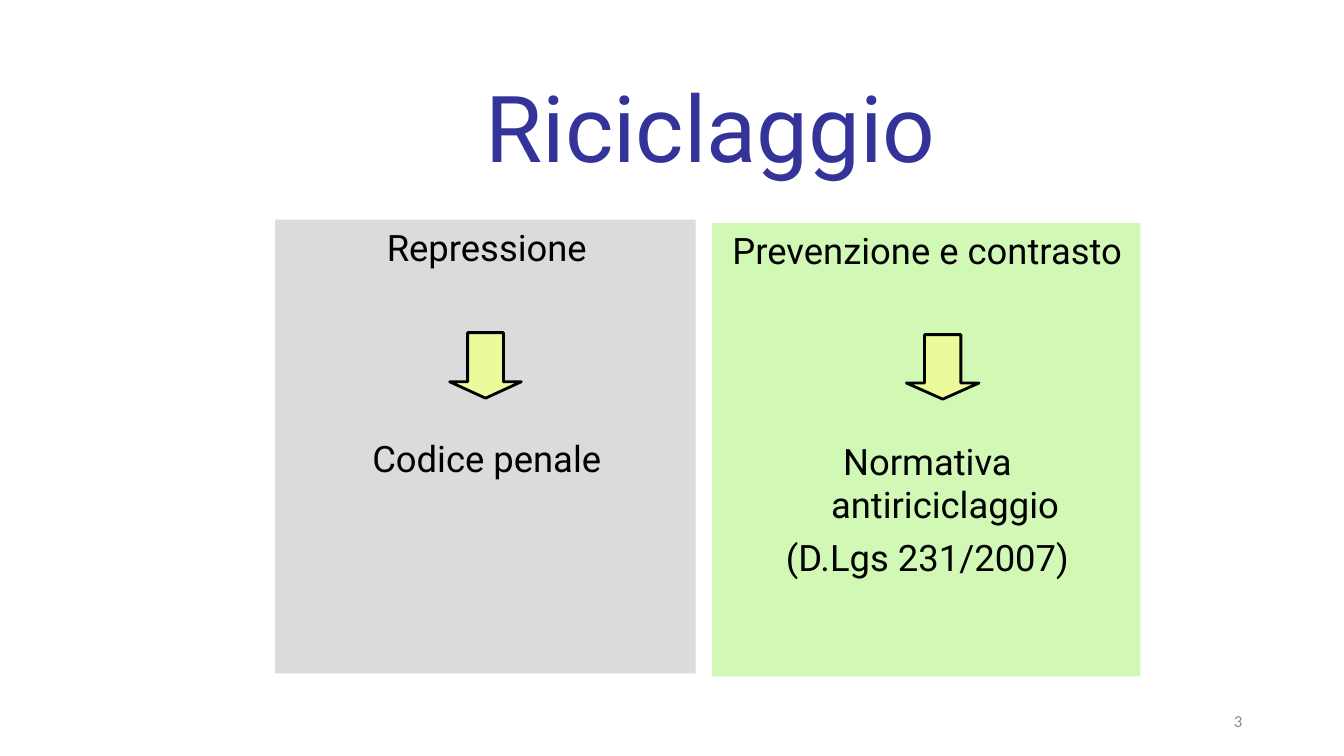
from dataclasses import dataclass

import pptx
import pptx.dml.color
import pptx.enum.shapes
import pptx.enum.text
import pptx.oxml.ns
import pptx.util
from lxml import etree

Inches = pptx.util.Inches
Align = pptx.enum.text.PP_ALIGN
Anchor = pptx.enum.text.MSO_ANCHOR


@dataclass(frozen=True)
class Theme:
    heading_font: str = "Roboto"
    number_font: str = "Calibri"
    title_size: float = 66
    body_size: float = 26
    number_size: float = 12
    title: str = "333399"
    text: str = "000000"
    number: str = "8C8C8C"
    arrow: str = "EBFB9B"
    paragraph_gap: float = 6.5
    arrow_gap: float = 119.5  # room below a heading for its arrow


@dataclass(frozen=True)
class Area:
    left: float
    top: float
    width: float
    height: float


@dataclass(frozen=True)
class Panel:
    area: Area
    fill: str
    heading: str
    lines: tuple[str, ...]
    arrow: Area


THEME = Theme()
PANELS = (
    Panel(Area(2.73, 2.18, 4.17, 4.5), "DBDBDB", "Repressione",
          ("Codice penale",), Area(4.49, 3.27, 0.65, 0.71)),
    Panel(Area(7.06, 2.21, 4.25, 4.5), "D1F9B5", "Prevenzione e contrasto",
          ("Normativa antiriciclaggio", "(D.Lgs 231/2007)"),
          Area(9.03, 3.28, 0.64, 0.72)),
)


def rgb(value: str) -> pptx.dml.color.RGBColor:
    return pptx.dml.color.RGBColor.from_string(value)


def place(shape, area: Area) -> None:
    shape.left, shape.top = Inches(area.left), Inches(area.top)
    shape.width, shape.height = Inches(area.width), Inches(area.height)


def prepare_frame(shape, anchor: Anchor):
    frame = shape.text_frame
    frame.word_wrap = True
    frame.auto_size = pptx.enum.text.MSO_AUTO_SIZE.NONE
    frame.vertical_anchor = anchor
    return frame


def write(para, text: str, *, size: float, color: str,
          font: str = THEME.heading_font, align: Align = Align.CENTER,
          before: float = 0) -> None:
    para.alignment = align
    para.space_before = pptx.util.Pt(before)
    span = para.add_run()
    span.text = text
    span.font.name = font
    span.font.size = pptx.util.Pt(size)
    span.font.color.rgb = rgb(color)


def hang_without_bullet(para) -> None:
    properties = para._p.get_or_add_pPr()
    properties.set("marL", str(Inches(0.38)))
    properties.set("indent", str(Inches(-0.35)))
    etree.SubElement(properties, pptx.oxml.ns.qn("a:buNone"))


def draw_panel(page, box, panel: Panel) -> None:
    place(box, panel.area)
    box.fill.solid()
    box.fill.fore_color.rgb = rgb(panel.fill)
    frame = prepare_frame(box, Anchor.TOP)
    for number, text in enumerate((panel.heading, *panel.lines)):
        para = frame.add_paragraph() if number else frame.paragraphs[0]
        gap = THEME.arrow_gap if number == 1 else THEME.paragraph_gap
        write(para, text, size=THEME.body_size, color=THEME.text, before=gap)
        hang_without_bullet(para)

    # Arrow from the heading down to the legal source
    arrow = page.shapes.add_shape(
        pptx.enum.shapes.MSO_SHAPE.RIGHT_ARROW, 0, 0, 0, 0)
    place(arrow, panel.arrow)
    arrow.rotation = 90
    arrow.adjustments[0], arrow.adjustments[1] = 0.5, 0.25
    arrow.shadow.inherit = False
    arrow.fill.solid()
    arrow.fill.fore_color.rgb = rgb(THEME.arrow)
    arrow.line.color.rgb = rgb(THEME.text)
    arrow.line.width = pptx.util.Pt(2)


def main() -> None:
    deck = pptx.Presentation()
    deck.slide_width, deck.slide_height = Inches(13.33), Inches(7.5)
    page = deck.slides.add_slide(deck.slide_layouts.get_by_name("Two Content"))

    # Title
    title = page.shapes.title
    place(title, Area(2.65, 0.23, 8.8, 1.62))
    write(prepare_frame(title, Anchor.BOTTOM).paragraphs[0], "Riciclaggio",
          size=THEME.title_size, color=THEME.title)

    # Two panels, one in each body placeholder
    for index, panel in enumerate(PANELS, start=1):
        draw_panel(page, page.placeholders[index], panel)

    # Page number
    number = page.shapes.add_textbox(0, 0, 0, 0)
    place(number, Area(9.42, 6.95, 3, 0.4))
    write(prepare_frame(number, Anchor.MIDDLE).paragraphs[0], "3",
          size=THEME.number_size, color=THEME.number,
          font=THEME.number_font, align=Align.RIGHT)

    deck.save("out.pptx")


if __name__ == "__main__":
    main()
